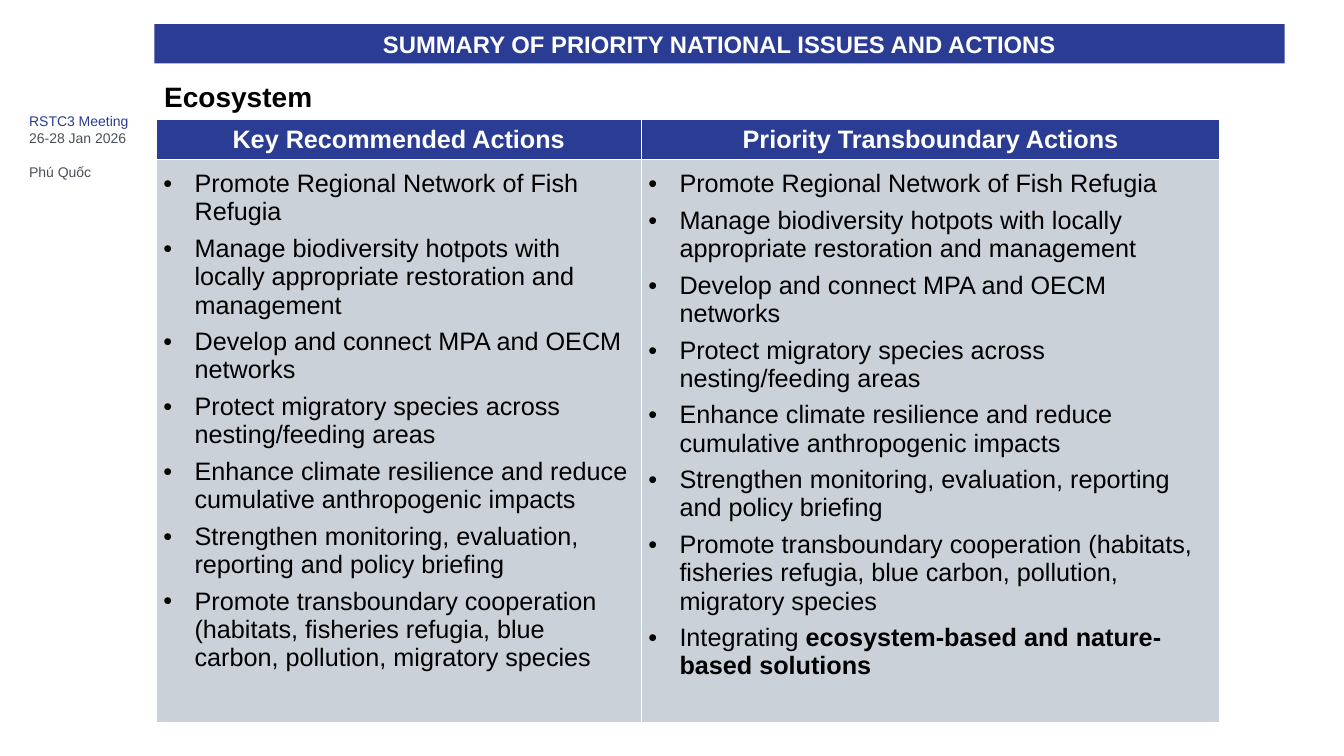
from pptx import Presentation
from pptx.dml.color import RGBColor
from pptx.enum.shapes import MSO_SHAPE
from pptx.enum.text import MSO_ANCHOR, PP_ALIGN
from pptx.oxml import parse_xml
from pptx.oxml.ns import nsdecls
from pptx.util import Inches, Pt

NAVY = RGBColor(0x2B, 0x3C, 0x94)
SLATE = RGBColor(0x49, 0x50, 0x57)
PALE = RGBColor(0xCA, 0xD1, 0xD8)
BLACK = RGBColor(0, 0, 0)
WHITE = RGBColor(255, 255, 255)

SHARED_ACTIONS = [
    "Promote Regional Network of Fish Refugia",
    "Manage biodiversity hotpots with locally appropriate restoration and management",
    "Develop and connect MPA and OECM networks",
    "Protect migratory species across nesting/feeding areas",
    "Enhance climate resilience and reduce cumulative anthropogenic impacts",
    "Strengthen monitoring, evaluation, reporting and policy briefing",
    "Promote transboundary cooperation (habitats, fisheries refugia, blue carbon, "
    "pollution, migratory species",
]
TRANSBOUNDARY_ACTIONS = SHARED_ACTIONS + [
    ("Integrating ", "ecosystem-based and nature-based solutions")
]


class SlideBuilder:
    font = "Arial"
    body_size = 18
    indent = Inches(0.31)

    def __init__(self, prs):
        self.width, self.height = prs.slide_width, prs.slide_height
        self.slide = prs.slides.add_slide(prs.slide_layouts[6])

    def x(self, percent):
        return round(self.width * percent / 100)

    def y(self, percent):
        return round(self.height * percent / 100)

    def box(self, left, top, width, height):
        return self.x(left), self.y(top), self.x(width), self.y(height)

    def style(self, r, size, color, bold=False):
        r.font.name = self.font
        r.font.size = Pt(size)
        r.font.bold = bold
        r.font.color.rgb = color

    def set_text(self, p, text, size, color, bold=False, align=PP_ALIGN.LEFT):
        p.text = text
        p.alignment = align
        self.style(p.runs[0], size, color, bold)

    def banner(self, area, text, size):
        sp = self.slide.shapes.add_shape(MSO_SHAPE.RECTANGLE, *self.box(*area))
        sp.shadow.inherit = False
        sp.fill.solid()
        sp.fill.fore_color.rgb = NAVY
        sp.line.fill.background()
        tf = sp.text_frame
        tf.vertical_anchor = MSO_ANCHOR.MIDDLE
        self.set_text(tf.paragraphs[0], text, size, WHITE, True, PP_ALIGN.CENTER)

    def label(self, area, lines, size, bold=False):
        tf = self.slide.shapes.add_textbox(*self.box(*area)).text_frame
        tf.word_wrap = True
        for i, (text, color, gap) in enumerate(lines):
            p = tf.add_paragraph() if i else tf.paragraphs[0]
            self.set_text(p, text, size, color, bold)
            if gap:
                p.space_before = Pt(gap)

    def paint(self, cell, color):
        cell.fill.solid()
        cell.fill.fore_color.rgb = color
        tc_pr = cell._tc.get_or_add_tcPr()
        for i, side in enumerate("LRTB"):
            tc_pr.insert(i, parse_xml(
                f'<a:ln{side} {nsdecls("a")} w="{Pt(0.75)}"><a:solidFill>'
                f'<a:srgbClr val="{WHITE}"/></a:solidFill></a:ln{side}>'))

    def bullet(self, p, action):
        p_pr = p._p.get_or_add_pPr()
        p_pr.set("marL", str(self.indent))
        p_pr.set("indent", str(-self.indent))
        for tag in (f'<a:buClr {nsdecls("a")}><a:srgbClr val="{BLACK}"/></a:buClr>',
                    f'<a:buFont {nsdecls("a")} typeface="{self.font}"/>',
                    f'<a:buChar {nsdecls("a")} char="•"/>'):
            p_pr.append(parse_xml(tag))
        plain, strong = (action, None) if isinstance(action, str) else action
        self.set_text(p, plain, self.body_size, BLACK)
        if strong:
            r = p.add_run()
            r.text = strong
            self.style(r, self.body_size, BLACK, True)

    def action_table(self, left, top, widths, heights, columns):
        area = self.box(left, top, sum(widths), sum(heights))
        table = self.slide.shapes.add_table(2, len(columns), *area).table
        table.horz_banding = False
        for row, height in zip(table.rows, heights):
            row.height = self.y(height)
        for i, (heading, actions) in enumerate(columns):
            table.columns[i].width = self.x(widths[i])
            head, body = table.cell(0, i), table.cell(1, i)
            self.paint(head, NAVY)
            head.vertical_anchor = MSO_ANCHOR.MIDDLE
            self.set_text(head.text_frame.paragraphs[0], heading, self.body_size,
                          WHITE, True, PP_ALIGN.CENTER)
            self.paint(body, PALE)
            body.margin_left = body.margin_right = Inches(0.07)
            body.margin_top = body.margin_bottom = Inches(0.1)
            tf = body.text_frame
            for n, action in enumerate(actions):
                p = tf.add_paragraph() if n else tf.paragraphs[0]
                if n:
                    p.space_before = Pt(6)
                self.bullet(p, action)


def main():
    prs = Presentation()
    prs.slide_width, prs.slide_height = Inches(13.33), Inches(7.5)
    s = SlideBuilder(prs)
    s.label((1.43, 14.27, 10.05, 8.13), [
        ("RSTC3 Meeting", NAVY, 0),
        ("26-28 Jan 2026", SLATE, 0),
        ("Phú Quốc", SLATE, 12),
    ], 10)
    s.action_table(11.63, 15.8, (36.08, 43.06), (5.2, 74.4), [
        ("Key Recommended Actions", SHARED_ACTIONS),
        ("Priority Transboundary Actions", TRANSBOUNDARY_ACTIONS),
    ])
    s.banner((11.48, 3.2, 84.1, 5.2),
             "SUMMARY OF PRIORITY NATIONAL ISSUES AND ACTIONS", 17)
    s.label((11.48, 9.87, 12.6, 5.87), [("Ecosystem", BLACK, 0)], 20, True)
    prs.save("out.pptx")


if __name__ == "__main__":
    main()
